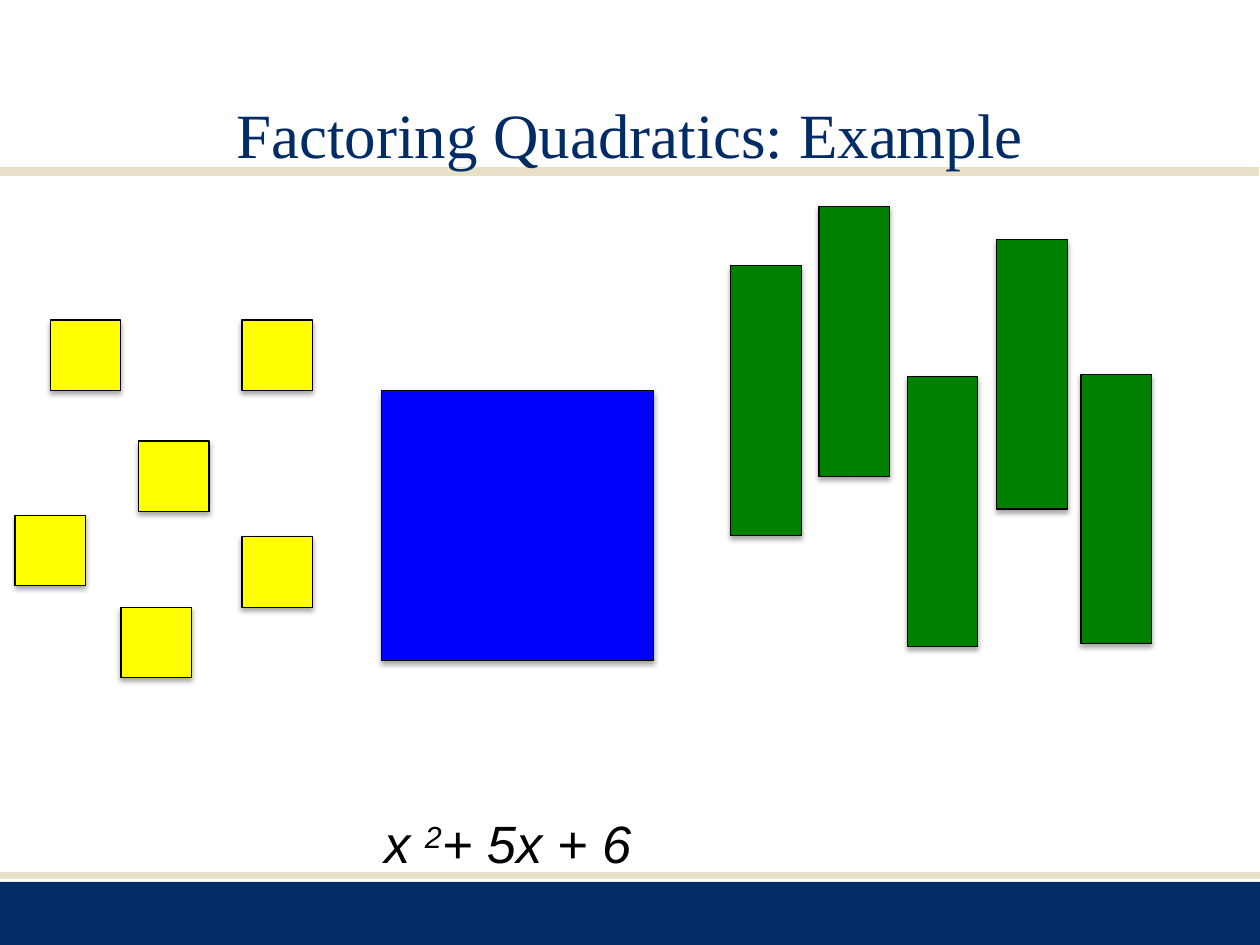
"""Build a slide of algebra tiles for factoring a quadratic."""
from lxml.etree import SubElement
from pptx import Presentation
from pptx.dml.color import RGBColor
from pptx.enum.shapes import MSO_CONNECTOR, MSO_SHAPE
from pptx.enum.text import MSO_ANCHOR, MSO_AUTO_SIZE, PP_ALIGN
from pptx.oxml.ns import qn
from pptx.util import Inches, Pt

COLORS = {"navy": "032B66", "sand": "E8E1C7", "black": "000000",
          "x": "008000", "one": "FFFF00", "square": "0000FF"}
UNIT, SIDE = 0.56, 2.14
X_TILES = [(5.8, 2.11, 0), (6.5, 1.64, 0), (7.91, 1.9, 180),
           (7.2, 2.99, 0), (8.58, 2.97, 0)]
ONE_TILES = [(0.12, 4.09), (0.4, 2.54), (1.1, 3.5),
             (0.96, 4.82), (1.92, 4.26), (1.92, 2.54)]


class TileSlide:
    def __init__(self, prs):
        self.s = prs.slides.add_slide(prs.slide_layouts[5])

    def color(self, name):
        return RGBColor.from_string(COLORS[name])

    def rect(self, x, y, w, h, fill):
        sp = self.s.shapes.add_shape(MSO_SHAPE.RECTANGLE, Inches(x), Inches(y),
                                     Inches(w), Inches(h))
        sp.shadow.inherit = False
        sp.fill.solid()
        sp.fill.fore_color.rgb = self.color(fill)
        sp.line.fill.background()
        return sp

    def tile(self, x, y, w, h, fill, rotation=0):
        sp = self.rect(x, y, w, h, fill)
        sp.rotation = rotation
        sp.line.color.rgb = self.color("black")
        sp.line.width = Pt(0.75)
        effects = sp._element.spPr.find(qn("a:effectLst"))
        shadow = SubElement(effects, qn("a:outerShdw"), blurRad=str(Pt(3.1)),
                            dist=str(Pt(1.8)), dir="5400000", rotWithShape="0")
        clr = SubElement(shadow, qn("a:srgbClr"), val=COLORS["black"])
        SubElement(clr, qn("a:alpha"), val="35000")

    def rule(self, x, y, w, width):
        ln = self.s.shapes.add_connector(MSO_CONNECTOR.STRAIGHT, Inches(x), Inches(y),
                                         Inches(x + w), Inches(y))
        ln.line.color.rgb = self.color("sand")
        ln.line.width = Pt(width)
        SubElement(ln._element.spPr, qn("a:effectLst"))

    def run(self, p, text, font, size, color):
        r = p.add_run()
        r.text = text
        r.font.name = font
        r.font.size = Pt(size)
        r.font.color.rgb = self.color(color)
        return r

    def title(self, text, x, y, w, h):
        sp = self.s.shapes.title
        sp.left, sp.top, sp.width, sp.height = map(Inches, (x, y, w, h))
        tf = sp.text_frame
        tf.vertical_anchor = MSO_ANCHOR.MIDDLE
        p = tf.paragraphs[0]
        p.alignment = PP_ALIGN.CENTER
        self.run(p, text, "Times New Roman", 36, "navy")
        tree = self.s.shapes._spTree
        tree.remove(sp._element)
        tree.append(sp._element)

    def formula(self, parts, x, y, w, h):
        tf = self.s.shapes.add_textbox(Inches(x), Inches(y), Inches(w), Inches(h)).text_frame
        tf.word_wrap = True
        tf.auto_size = MSO_AUTO_SIZE.SHAPE_TO_FIT_TEXT
        for text, raised in parts:
            r = self.run(tf.paragraphs[0], text, "Arial", 30, "black")
            r.font.italic = True
            if raised:
                r.font._element.set("baseline", "30000")


def main():
    prs = Presentation()
    prs.slide_width, prs.slide_height = Inches(10), Inches(7.5)
    slide = TileSlide(prs)
    slide.rect(0, 7, 10, 0.5, "navy")
    slide.rule(0, 6.95, 10, 4)
    slide.rule(-0.01, 1.36, 10, 5)
    slide.title("Factoring Quadratics: Example", 0, 0.42, 10, 1.27)
    for x, y, rotation in X_TILES:
        slide.tile(x, y, UNIT, SIDE, "x", rotation)
    for x, y in ONE_TILES:
        slide.tile(x, y, UNIT, UNIT, "one")
    slide.formula([("x ", False), ("2", True), ("+ 5x + 6", False)],
                  2.95, 6.39, 2.52, 0.94)
    slide.tile(3.03, 3.1, 2.16, SIDE, "square")
    prs.save("out.pptx")


if __name__ == "__main__":
    main()
